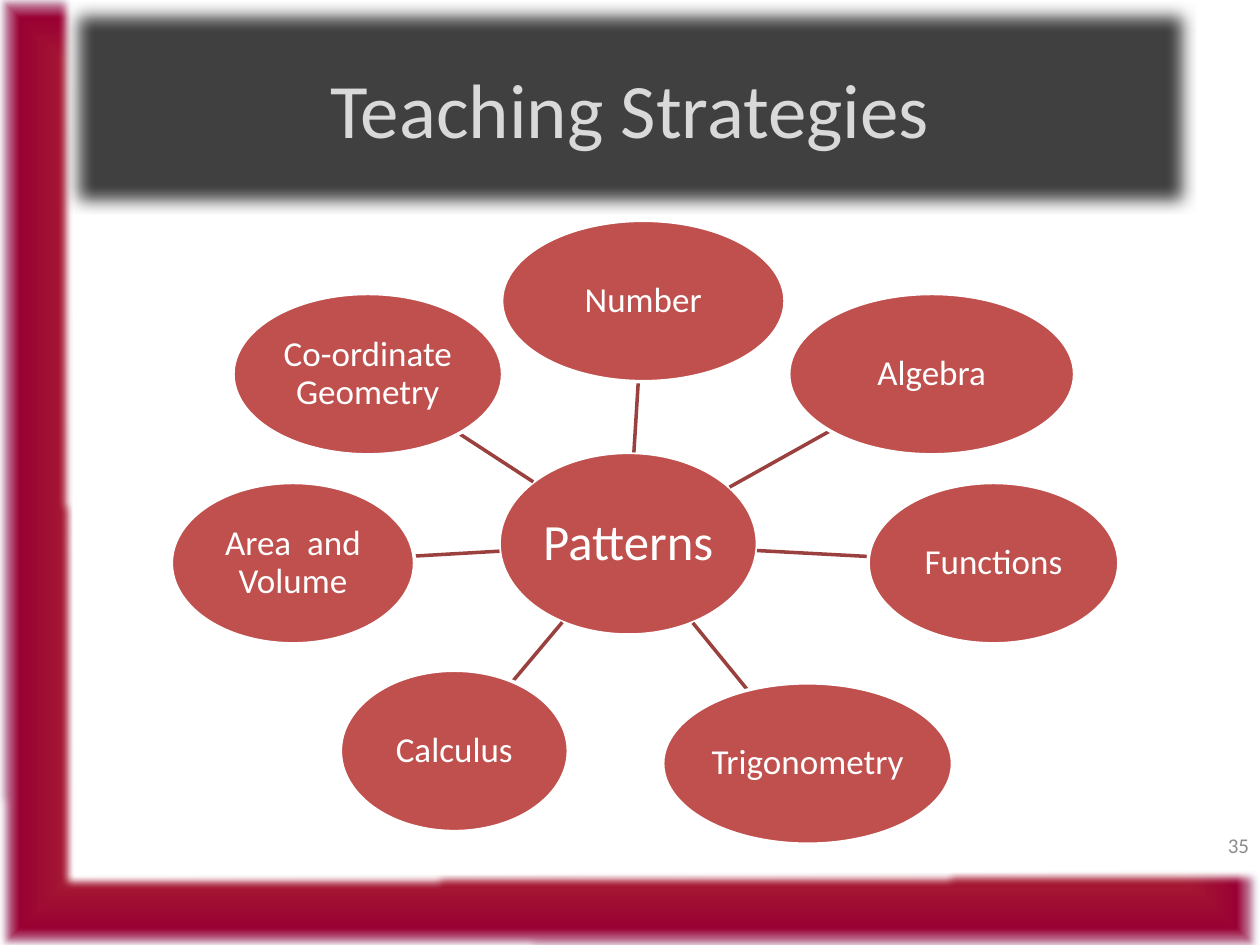
from math import hypot
from pptx import Presentation
from pptx.dml.color import RGBColor
from pptx.enum.shapes import MSO_CONNECTOR, MSO_SHAPE
from pptx.enum.text import MSO_ANCHOR, PP_ALIGN
from pptx.oxml import parse_xml
from pptx.oxml.ns import nsdecls, qn
from pptx.util import Pt
from lxml.etree import SubElement

HUB = ("Patterns", 359, 310.7, 147.6, 104.4, 29)
TOPIC_HEIGHT = 92.2
TOPICS = [
    ("Number", 367.6, 172, 162),
    ("Algebra", 532.4, 213.8, 163.4),
    ("Functions", 567.7, 321.8, 143.3),
    ("Trigonometry", 461.5, 436.3, 165.6),
    ("Calculus", 259.6, 429.1, 130.3),
    ("Area  and Volume", 167.4, 321.8, 139),
    ("Co-ordinate Geometry", 210.2, 213.8, 154.1),
]
FRAME = [(-2.2, -2.9), (41, -2.9), (42.5, 501.1), (720.7, 498.2), (720.7, 544.3), (-0.7, 542.2)]
FRAME_STOPS = [(19, "FDCC33"), (95, "990033"), (100, "E1E8F5")]


def rgb(value):
    return RGBColor.from_string(value)


def edge_point(center, size, toward):
    dx, dy = toward[0] - center[0], toward[1] - center[1]
    t = 1 / hypot(2 * dx / size[0], 2 * dy / size[1])
    return center[0] + dx * t, center[1] + dy * t


class Deck:
    """Holds the style and the current slide."""

    font, oval_fill, spoke, white = "Calibri", "C0504D", "9A403E", "FFFFFF"

    def __init__(self, prs):
        self.s = prs.slides.add_slide(prs.slide_layouts[5])

    def set_text(self, sp, text, size, color, align=PP_ALIGN.CENTER):
        tf = sp.text_frame
        tf.word_wrap = True
        tf.vertical_anchor = MSO_ANCHOR.MIDDLE
        p = tf.paragraphs[0]
        p.text = text
        p.alignment = align
        p.font.name, p.font.size = self.font, Pt(size)
        p.font.color.rgb = rgb(color)
        return tf, p

    def soften(self, sp, radius):
        sp.shadow.inherit = False
        effects = sp.element.spPr.find(qn("a:effectLst"))
        SubElement(effects, qn("a:softEdge"), rad=str(Pt(radius)))

    def title(self, text, left, top, width, height):
        sp = self.s.shapes.title
        sp.left, sp.top, sp.width, sp.height = Pt(left), Pt(top), Pt(width), Pt(height)
        sp.fill.solid()
        sp.fill.fore_color.rgb = rgb("404040")
        self.soften(sp, 10)
        self.set_text(sp, text, 44, "D9D9D9")

    def frame(self, points, stops):
        corners = [(Pt(x), Pt(y)) for x, y in points]
        builder = self.s.shapes.build_freeform(*corners[0])
        builder.add_line_segments(corners[1:], close=True)
        sp = builder.convert_to_shape()
        sp.line.fill.background()
        sp.fill.gradient()
        spPr = sp.element.spPr
        gs = "".join(f'<a:gs pos="{pos * 1000}"><a:srgbClr val="{c}"/></a:gs>' for pos, c in stops)
        spPr.replace(spPr.find(qn("a:gradFill")), parse_xml(
            f'<a:gradFill {nsdecls("a")} rotWithShape="1"><a:gsLst>{gs}</a:gsLst><a:path path="shape">'
            '<a:fillToRect l="50000" t="50000" r="50000" b="50000"/></a:path></a:gradFill>'))
        self.soften(sp, 5)
        self.s.shapes.title.element.addprevious(sp.element)

    def oval(self, text, x, y, width, height, size):
        sp = self.s.shapes.add_shape(MSO_SHAPE.OVAL, Pt(x - width / 2), Pt(y - height / 2),
                                     Pt(width), Pt(height))
        sp.shadow.inherit = False
        sp.fill.solid()
        sp.fill.fore_color.rgb = rgb(self.oval_fill)
        sp.line.color.rgb = rgb(self.white)
        sp.line.width = Pt(2)
        tf, p = self.set_text(sp, text, size, self.white)
        tf.margin_left = tf.margin_right = tf.margin_top = tf.margin_bottom = Pt(1)
        p.line_spacing = 0.9

    def line(self, start, end):
        c = self.s.shapes.add_connector(MSO_CONNECTOR.STRAIGHT, *(Pt(v) for v in start + end))
        c.line.color.rgb = rgb(self.spoke)
        c.line.width = Pt(2)
        SubElement(c.element.spPr, qn("a:effectLst"))

    def number(self, text, left, top, width, height):
        sp = self.s.shapes.add_textbox(Pt(left), Pt(top), Pt(width), Pt(height))
        self.set_text(sp, text, 12, "8C8C8C", PP_ALIGN.RIGHT)


def main():
    prs = Presentation()
    prs.slide_width, prs.slide_height = Pt(720), Pt(540)
    deck = Deck(prs)
    deck.frame(FRAME, FRAME_STOPS)
    deck.title("Teaching Strategies", 36, 0.7, 648, 121.7)
    deck.number("35", 553, 468.7, 167.8, 28.8)
    deck.oval(*HUB)
    hub, hub_size = HUB[1:3], HUB[3:5]
    for text, x, y, width in TOPICS:
        deck.line(edge_point(hub, hub_size, (x, y)),
                  edge_point((x, y), (width, TOPIC_HEIGHT), hub))
        deck.oval(text, x, y, width, TOPIC_HEIGHT, 20)
    prs.save("out.pptx")


if __name__ == "__main__":
    main()
